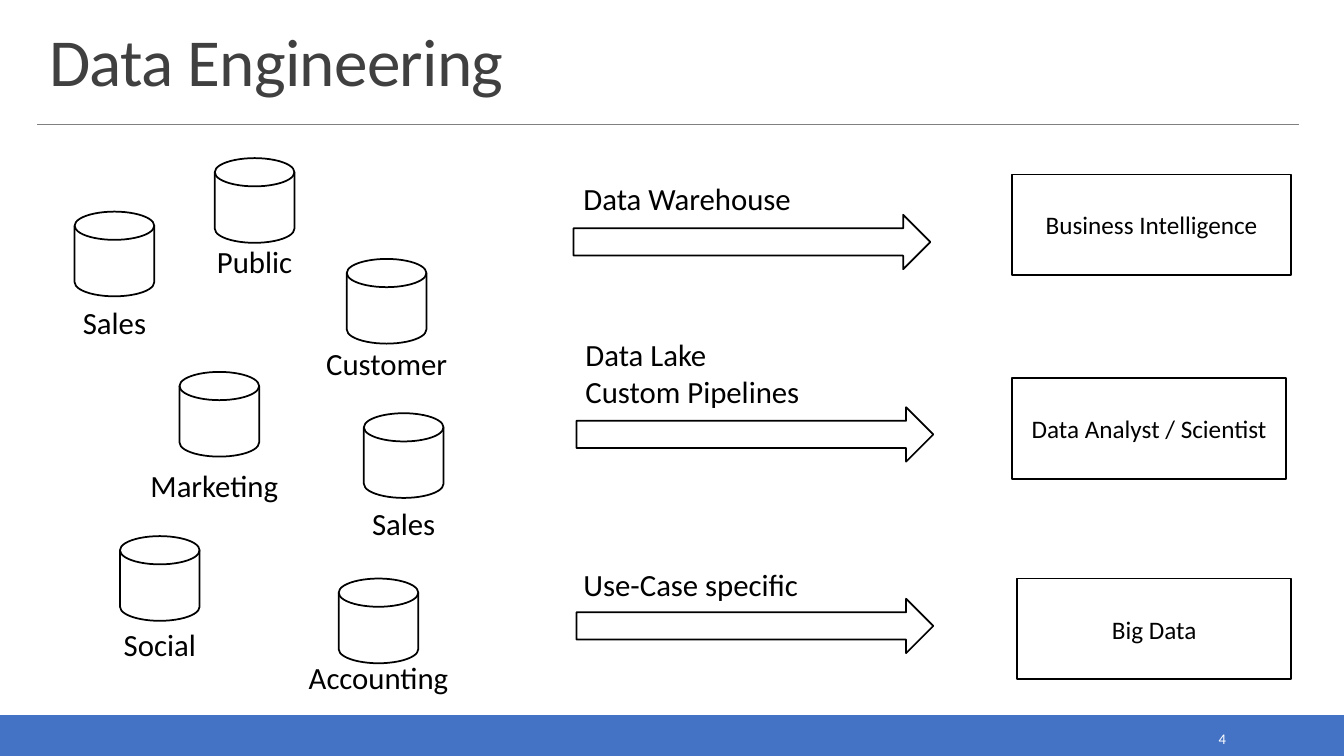
from dataclasses import dataclass

from lxml.etree import SubElement
from pptx import Presentation
from pptx.dml.color import RGBColor
from pptx.enum.shapes import MSO_CONNECTOR, MSO_SHAPE as Preset
from pptx.enum.text import MSO_ANCHOR as Anchor, PP_ALIGN as Align
from pptx.oxml.ns import qn
from pptx.shapes.autoshape import Shape
from pptx.slide import Slide
from pptx.text.text import TextFrame, _Paragraph as Paragraph
from pptx.util import Pt

COLORS = {
    "ink": "000000",
    "paper": "FFFFFF",
    "title": "404040",
    "rule": "808080",
    "footer": "4472C4",
}
DISK_WIDTH, DISK_HEIGHT = 56.9, 60.5
ARROW_WIDTH, ARROW_HEIGHT = 254.9, 38.9
LABEL_HEIGHT, FLOW_LABEL_WIDTH, CONSUMER_HEIGHT = 33.8, 217.4, 72


@dataclass(frozen=True)
class Box:
    left: float
    top: float
    width: float
    height: float


@dataclass(frozen=True)
class Source:
    name: str
    left: float
    top: float
    label_top: float
    label_width: float
    label_shift: float = 0


@dataclass(frozen=True)
class Flow:
    method: str
    label: Box
    arrow_left: float
    arrow_top: float
    consumer: str
    consumer_box: Box


SOURCES = [
    Source("Sales", 53.3, 151.2, 213.1, 85),
    Source("Public", 153.4, 113, 169.9, 106.6),
    Source("Customer", 247.7, 185, 242.6, 106.6),
    Source("Marketing", 128.2, 265.7, 329.8, 114.5, -3.6),
    Source("Sales", 259.9, 295.2, 357.1, 85),
    Source("Social", 85.7, 383, 443.5, 106.6),
    Source("Accounting", 241.9, 413.3, 467.3, 114.5),
]
FLOWS = [
    Flow("Data Warehouse", Box(409.7, 124.6, FLOW_LABEL_WIDTH, LABEL_HEIGHT),
         409.7, 153.4,
         "Business Intelligence", Box(722.9, 124.6, 199.4, CONSUMER_HEIGHT)),
    Flow("Data Lake\nCustom Pipelines", Box(411.1, 236.2, FLOW_LABEL_WIDTH, 60.5),
         411.8, 290.9,
         "Data Analyst / Scientist", Box(722.9, 270, 195.8, CONSUMER_HEIGHT)),
    Flow("Use-Case specific", Box(409.7, 400.3, FLOW_LABEL_WIDTH, LABEL_HEIGHT),
         411.8, 427.7,
         "Big Data", Box(726.5, 413.3, 195.8, CONSUMER_HEIGHT)),
]


def rgb(color: str) -> RGBColor:
    return RGBColor.from_string(COLORS[color])


def write(frame: TextFrame, text: str, size: float, color: str = "ink",
          align: Align = Align.LEFT, anchor: Anchor = Anchor.TOP) -> Paragraph:
    frame.word_wrap = True
    frame.vertical_anchor = anchor
    paragraph = frame.paragraphs[0]
    paragraph.text = text
    paragraph.alignment = align
    paragraph.font.name = "Calibri"
    paragraph.font.size = Pt(size)
    paragraph.font.color.rgb = rgb(color)
    return paragraph


def add_label(slide: Slide, box: Box, text: str, size: float = 22, color: str = "ink",
              align: Align = Align.LEFT, anchor: Anchor = Anchor.TOP) -> Paragraph:
    label = slide.shapes.add_textbox(
        Pt(box.left), Pt(box.top), Pt(box.width), Pt(box.height))
    return write(label.text_frame, text, size, color, align, anchor)


def add_preset(slide: Slide, preset: Preset, box: Box,
               fill: str | None = None, line: str = "ink") -> Shape:
    shape = slide.shapes.add_shape(
        preset, Pt(box.left), Pt(box.top), Pt(box.width), Pt(box.height))
    shape.shadow.inherit = False
    if fill:
        shape.fill.solid()
        shape.fill.fore_color.rgb = rgb(fill)
    else:
        shape.fill.background()
    shape.line.color.rgb = rgb(line)
    shape.line.width = Pt(1.25)
    return shape


def add_frame(slide: Slide) -> None:
    add_preset(slide, Preset.RECTANGLE, Box(0, 511.2, 960, 28.8), "footer", "footer")
    rule = slide.shapes.add_connector(
        MSO_CONNECTOR.STRAIGHT, Pt(26.6), Pt(88.6), Pt(928.1), Pt(88.6))
    rule.line.color.rgb = rgb("rule")
    rule.line.width = Pt(0.5)
    SubElement(rule._element.spPr, qn("a:effectLst"))
    title = add_label(slide, Box(28.1, 14.4, 901.4, 60.5), "Data Engineering",
                      48, "title", anchor=Anchor.BOTTOM)
    title.line_spacing = 0.85
    title.runs[0]._r.get_or_add_rPr().set("spc", "-50")
    add_label(slide, Box(779.8, 517.7, 103, 20.2), "4", 10.5, "paper",
              Align.RIGHT, Anchor.MIDDLE)


def add_source(slide: Slide, source: Source) -> None:
    add_preset(slide, Preset.FLOWCHART_MAGNETIC_DISK,
               Box(source.left, source.top, DISK_WIDTH, DISK_HEIGHT))
    label_left = source.left + (DISK_WIDTH - source.label_width) / 2 + source.label_shift
    add_label(slide, Box(label_left, source.label_top, source.label_width, LABEL_HEIGHT),
              source.name, align=Align.CENTER)


def add_flow(slide: Slide, flow: Flow) -> None:
    add_preset(slide, Preset.RIGHT_ARROW,
               Box(flow.arrow_left, flow.arrow_top, ARROW_WIDTH, ARROW_HEIGHT))
    add_label(slide, flow.label, flow.method)
    consumer = add_preset(slide, Preset.RECTANGLE, flow.consumer_box, "paper")
    write(consumer.text_frame, flow.consumer, 18, align=Align.CENTER, anchor=Anchor.MIDDLE)


def main() -> None:
    deck = Presentation()
    deck.slide_width, deck.slide_height = Pt(960), Pt(540)
    slide = deck.slides.add_slide(deck.slide_layouts[6])
    add_frame(slide)
    for source in SOURCES:
        add_source(slide, source)
    for flow in FLOWS:
        add_flow(slide, flow)
    deck.save("out.pptx")


if __name__ == "__main__":
    main()
